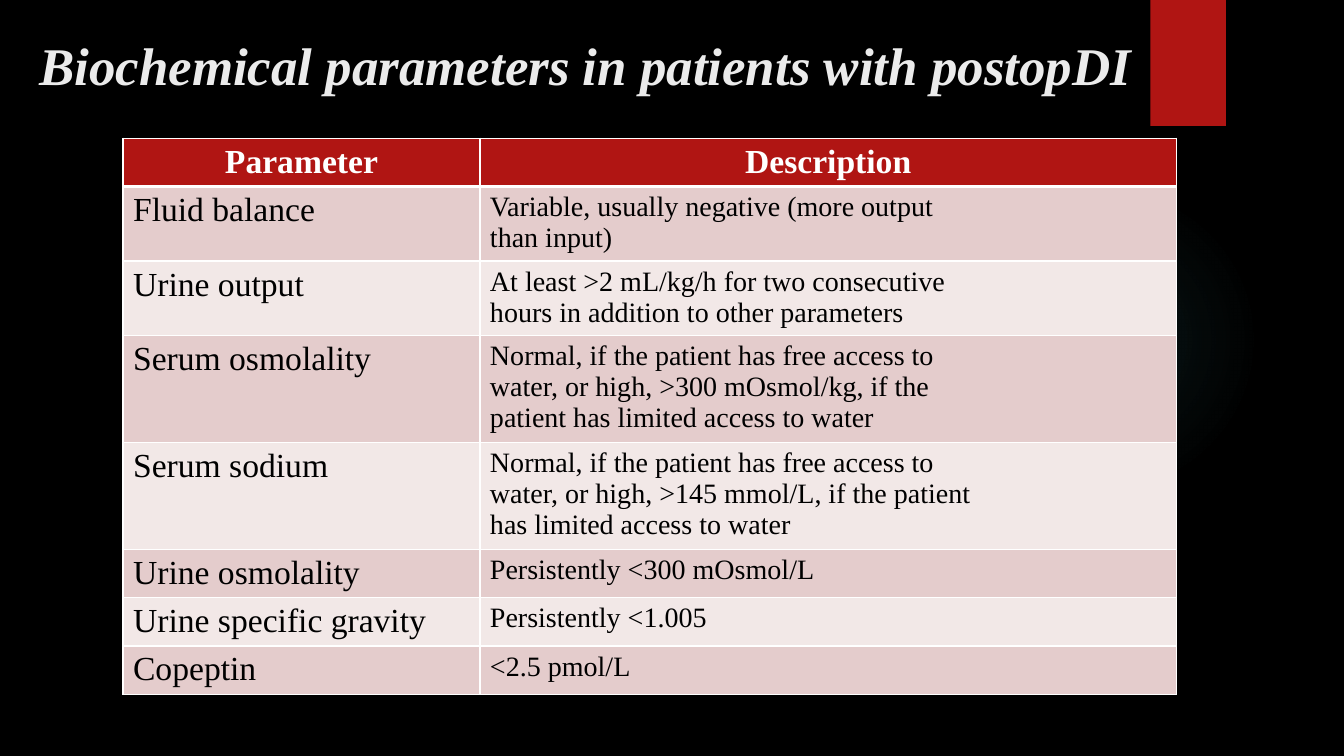
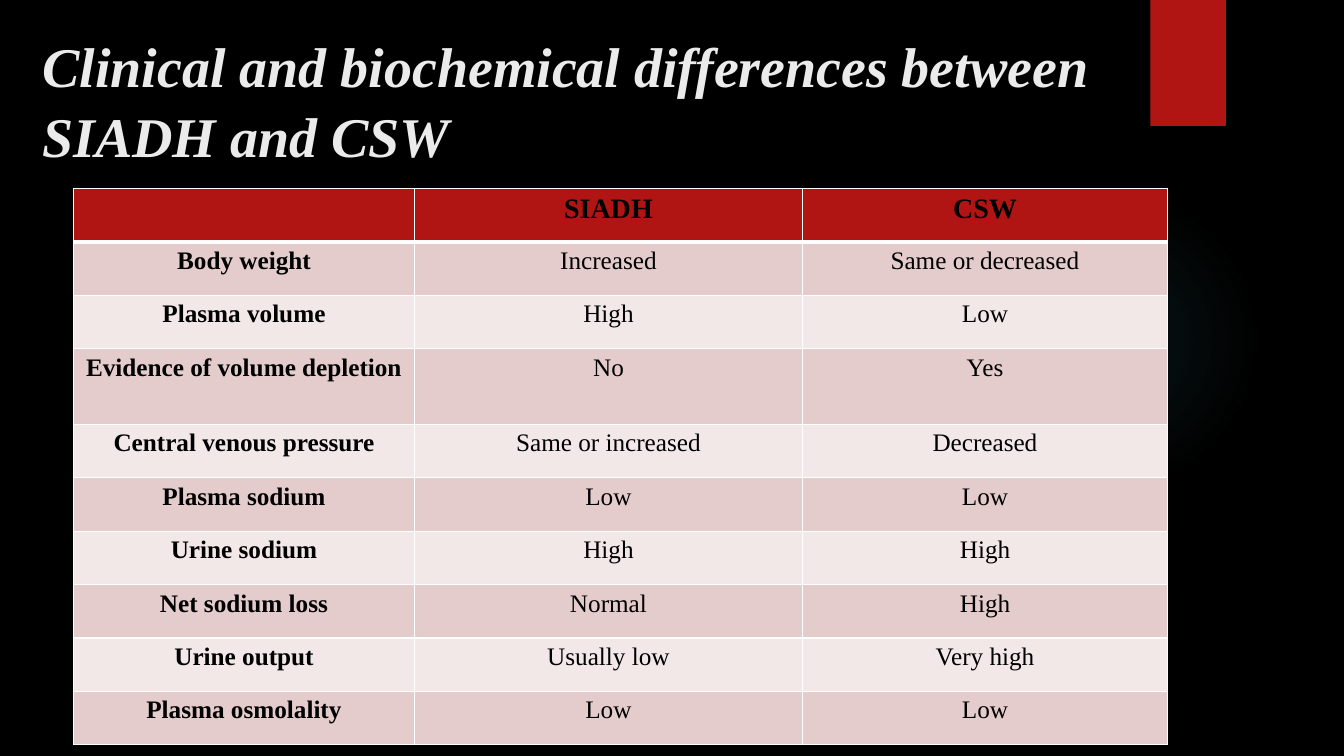
from dataclasses import dataclass

import pptx
import pptx.dml.color
import pptx.enum.shapes
import pptx.enum.text
import pptx.oxml
import pptx.oxml.ns
import pptx.presentation
import pptx.shapes.autoshape
import pptx.slide
import pptx.table
import pptx.text.text
import pptx.util

EMU_PER_PX = 9144  # 100 px to the inch
ALIGN = pptx.enum.text.PP_ALIGN
SHAPE = pptx.enum.shapes.MSO_SHAPE


@dataclass(frozen=True)
class Theme:
    font: str = "Times New Roman"
    background: str = "000000"
    title: str = "EBEBEB"
    accent: str = "B01513"
    glow: str = "50B9C1"
    text: str = "000000"
    light: str = "FFFFFF"
    bands: tuple[str, str] = ("E4CCCC", "F2E8E7")
    heading_size: int = 24
    large_size: int = 20
    body_size: int = 18
    border: int = 1
    header_border: int = 3


@dataclass(frozen=True)
class Box:
    left: int
    top: int
    width: int
    height: int


@dataclass(frozen=True)
class Column:
    width: int
    size: int
    bold: bool = False
    align: ALIGN = ALIGN.LEFT


@dataclass(frozen=True)
class Grid:
    left: int
    top: int
    columns: tuple[Column, ...]
    heights: tuple[int, ...]
    header_size: int
    header_color: str
    rows: tuple[tuple[str, ...], ...]


@dataclass(frozen=True)
class TableSlide:
    title: str
    title_size: float
    title_box: Box
    grid: Grid
    title_spacing: float = 1.0


THEME = Theme()
GLOW = Box(941, 183, 308, 308)
TAB = Box(1141, 0, 75, 125)

SLIDES = (
    TableSlide(
        "Biochemical parameters in patients with postopDI", 37.8,
        Box(29, 22, 1241, 116),
        Grid(
            122, 137,
            (Column(354, THEME.heading_size), Column(691, THEME.large_size)),
            (48, 74, 74, 106, 106, 48, 48, 48),
            THEME.heading_size, THEME.light,
            (
                ("Parameter", "Description"),
                ("Fluid balance",
                 "Variable, usually negative (more output\nthan input)"),
                ("Urine output",
                 "At least >2 mL/kg/h for two consecutive\n"
                 "hours in addition to other parameters"),
                ("Serum osmolality",
                 "Normal, if the patient has free access to\n"
                 "water, or high, >300 mOsmol/kg, if the\n"
                 "patient has limited access to water"),
                ("Serum sodium",
                 "Normal, if the patient has free access to\n"
                 "water, or high, >145 mmol/L, if the patient\n"
                 "has limited access to water"),
                ("Urine osmolality", "Persistently <300 mOsmol/L"),
                ("Urine specific gravity", "Persistently <1.005"),
                ("Copeptin", "<2.5 pmol/L"),
            ),
        ),
    ),
    TableSlide(
        "Clinical and biochemical differences between SIADH and CSW", 40,
        Box(32, 19, 1095, 159),
        Grid(
            73, 187,
            (Column(338, THEME.body_size, True, ALIGN.CENTER),
             Column(385, THEME.body_size, False, ALIGN.CENTER),
             Column(362, THEME.body_size, False, ALIGN.CENTER)),
            (53,) * 3 + (75,) + (53,) * 6,
            THEME.large_size, THEME.text,
            (
                ("", "SIADH", "CSW"),
                ("Body weight", "Increased", "Same or decreased"),
                ("Plasma volume", "High", "Low"),
                ("Evidence of volume depletion", "No", "Yes"),
                ("Central venous pressure", "Same or increased", "Decreased"),
                ("Plasma sodium", "Low", "Low"),
                ("Urine sodium", "High", "High"),
                ("Net sodium loss", "Normal", "High"),
                ("Urine output", "Usually low", "Very high"),
                ("Plasma osmolality", "Low", "Low"),
            ),
        ),
        title_spacing=1.04,
    ),
)


def px(length: int) -> pptx.util.Emu:
    return pptx.util.Emu(length * EMU_PER_PX)


def rgb(value: str) -> pptx.dml.color.RGBColor:
    return pptx.dml.color.RGBColor.from_string(value)


def write(tf: pptx.text.text.TextFrame, text: str, *, size: float, color: str,
          bold: bool = False, italic: bool = False, align: ALIGN = ALIGN.LEFT,
          spacing: float = 1.0) -> None:
    """Fill a text frame, one paragraph for each line of text."""
    for i, line in enumerate(text.split("\n")):
        p = tf.paragraphs[0] if i == 0 else tf.add_paragraph()
        p.alignment = align
        p.line_spacing = spacing
        if not line:
            continue
        r = p.add_run()
        r.text = line
        r.font.name = THEME.font
        r.font.size = pptx.util.Pt(size)
        r.font.bold = bold
        r.font.italic = italic
        r.font.color.rgb = rgb(color)


def add_plain_shape(s: pptx.slide.Slide, kind: SHAPE,
                    box: Box) -> pptx.shapes.autoshape.Shape:
    sp = s.shapes.add_shape(kind, px(box.left), px(box.top),
                            px(box.width), px(box.height))
    sp.shadow.inherit = False
    sp.line.fill.background()
    return sp


def set_glow(sp: pptx.shapes.autoshape.Shape) -> None:
    """Give the shape a radial gradient that fades out to its edge."""
    stops = "".join(
        f'<a:gs pos="{pos * 1000}"><a:srgbClr val="{THEME.glow}">'
        f'<a:alpha val="{alpha * 1000}"/></a:srgbClr></a:gs>'
        for pos, alpha in ((0, 7), (36, 6), (69, 0)))
    gradient = pptx.oxml.parse_xml(
        f'<a:gradFill {pptx.oxml.ns.nsdecls("a")} rotWithShape="1">'
        f'<a:gsLst>{stops}</a:gsLst><a:path path="circle">'
        '<a:fillToRect l="50000" t="50000" r="50000" b="50000"/>'
        '</a:path></a:gradFill>')
    sp.fill.background()
    spPr = sp.element.spPr
    spPr.replace(spPr.find(pptx.oxml.ns.qn("a:noFill")), gradient)


def decorate_layout(layout: pptx.slide.SlideLayout, s: pptx.slide.Slide) -> None:
    """Draw the shared shapes on a slide and move them to its layout."""
    glow = add_plain_shape(s, SHAPE.OVAL, GLOW)
    set_glow(glow)
    tab = add_plain_shape(s, SHAPE.RECTANGLE, TAB)
    tab.fill.solid()
    tab.fill.fore_color.rgb = rgb(THEME.accent)
    for sp in (glow, tab):
        layout.shapes.element.append(sp.element)


def set_title(s: pptx.slide.Slide, content: TableSlide) -> None:
    title, box = s.shapes.title, content.title_box
    title.left, title.top = px(box.left), px(box.top)
    title.width, title.height = px(box.width), px(box.height)
    tf = title.text_frame
    tf.word_wrap = True
    tf.auto_size = pptx.enum.text.MSO_AUTO_SIZE.NONE
    tf.vertical_anchor = pptx.enum.text.MSO_ANCHOR.TOP
    tf.margin_top = px(10)
    write(tf, content.title, size=content.title_size, color=THEME.title,
          bold=True, italic=True, spacing=content.title_spacing)


def set_borders(cell: pptx.table._Cell, row: int) -> None:
    """Draw the cell's edges, heavier between the header and the body."""
    widths = {"L": THEME.border, "R": THEME.border,
              "T": THEME.header_border if row == 1 else THEME.border,
              "B": THEME.header_border if row == 0 else THEME.border}
    tcPr = cell._tc.get_or_add_tcPr()
    for side, width in widths.items():
        tcPr.append(pptx.oxml.parse_xml(
            f'<a:ln{side} {pptx.oxml.ns.nsdecls("a")} '
            f'w="{pptx.util.Pt(width)}"><a:solidFill>'
            f'<a:srgbClr val="{THEME.light}"/></a:solidFill></a:ln{side}>'))


def add_grid(s: pptx.slide.Slide, grid: Grid) -> None:
    table = s.shapes.add_table(
        len(grid.rows), len(grid.columns), px(grid.left), px(grid.top),
        px(sum(c.width for c in grid.columns)), px(sum(grid.heights))).table
    for j, column in enumerate(grid.columns):
        table.columns[j].width = px(column.width)
    for i, (height, texts) in enumerate(zip(grid.heights, grid.rows)):
        table.rows[i].height = px(height)
        for j, (column, text) in enumerate(zip(grid.columns, texts)):
            cell = table.cell(i, j)
            set_borders(cell, i)
            cell.fill.solid()
            if i == 0:
                cell.fill.fore_color.rgb = rgb(THEME.accent)
                write(cell.text_frame, text, size=grid.header_size,
                      color=grid.header_color, bold=True, align=ALIGN.CENTER)
            else:
                cell.fill.fore_color.rgb = rgb(THEME.bands[(i - 1) % 2])
                write(cell.text_frame, text, size=column.size,
                      color=THEME.text, bold=column.bold, align=column.align)


def main() -> None:
    prs = pptx.Presentation()
    prs.slide_width, prs.slide_height = px(1333), px(750)
    background = prs.slide_master.background.fill
    background.solid()
    background.fore_color.rgb = rgb(THEME.background)
    layout = prs.slide_layouts.get_by_name("Title Only")
    for i, content in enumerate(SLIDES):
        s = prs.slides.add_slide(layout)
        if i == 0:
            decorate_layout(layout, s)
        set_title(s, content)
        add_grid(s, content.grid)
    prs.save("out.pptx")


if __name__ == "__main__":
    main()
